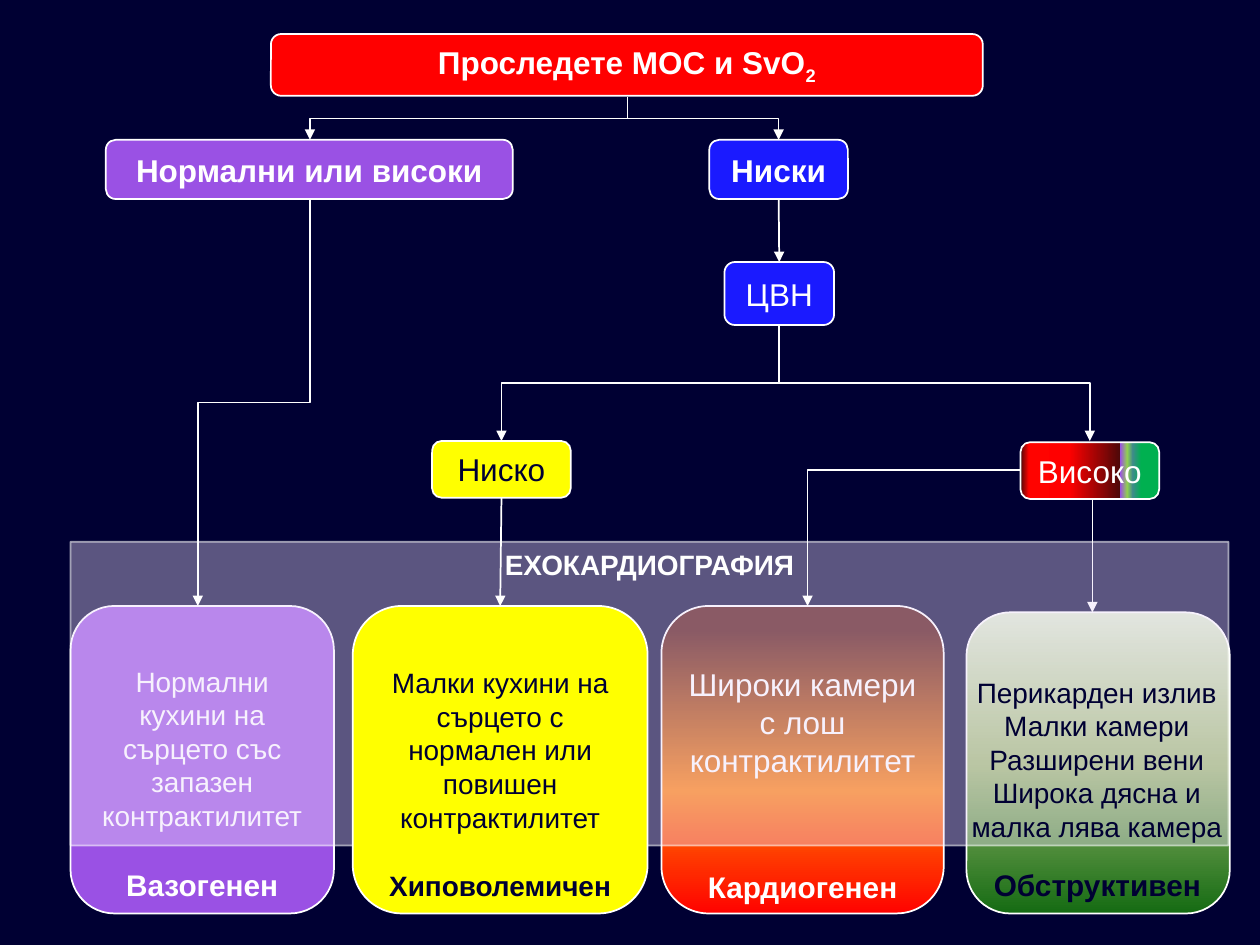
from pptx import Presentation
from pptx.dml.color import RGBColor
from pptx.enum.shapes import MSO_CONNECTOR as Link, MSO_SHAPE as Kind
from pptx.enum.text import MSO_ANCHOR as Anchor, PP_ALIGN as Align
from pptx.oxml import parse_xml
from pptx.oxml.ns import nsdecls, qn
from pptx.util import Inches, Pt
from lxml.etree import SubElement

HUES = {
    "navy": "000033", "white": "FFFFFF", "violet": "9A51E4", "blue": "1A1AFF",
    "yellow": "FFFF00", "red": "FF0000", "lilac": "EBDDFA",
}
FIRE = [(0, "FF0300"), (40, "FF7A00"), (92, "4D0808"), (100, "4D0808")]
LEAF = [(0, "DDEBCF"), (50, "9CB86E"), (100, "156B13")]
MIXED = [(13, "00B050"), (19, "3E8A8B"), (23, "92D050"), (28, "9A51E4"),
         (28, "4D0808"), (65, "FF0000"), (94, "FF0300"), (100, "4D0808")]


def hue(name):
    """Return the named colour."""
    return RGBColor.from_string(HUES[name])


def fade(fill, alpha):
    """Make a solid fill element partly transparent."""
    color = next(fill.iter(qn("a:srgbClr")))
    SubElement(color, qn("a:alpha")).set("val", str(alpha * 1000))


def blend(shape, stops, angle):
    """Fill a shape with a linear gradient."""
    marks = "".join(f'<a:gs pos="{pos * 1000}"><a:srgbClr val="{tint}"/></a:gs>'
                    for pos, tint in stops)
    shape._element.spPr.insert(2, parse_xml(
        f'<a:gradFill {nsdecls("a")} rotWithShape="1"><a:gsLst>{marks}</a:gsLst>'
        f'<a:lin ang="{angle * 60000}" scaled="1"/></a:gradFill>'))


def write(shape, *lines, size=18, color="white", bold=False, sub="", wrap=False,
          anchor=Anchor.MIDDLE, top=0.05, label="", lsize=17, gap=20):
    """Write centred lines, with an optional subscript and bold label."""
    frame = shape.text_frame
    frame.word_wrap = wrap
    frame.vertical_anchor = anchor
    frame.margin_top = Inches(top)
    rows = [(line, size, bold, 0) for line in lines]
    if label:
        rows.append((label, lsize, True, gap))
    for num, (line, points, heavy, space) in enumerate(rows):
        para = frame.add_paragraph() if num else frame.paragraphs[0]
        para.alignment = Align.CENTER
        para.space_before = Pt(space)
        for part in filter(None, (line, sub)):
            run = para.add_run()
            run.text = part
            run.font.name = "Arial"
            run.font.size = Pt(points)
            run.font.bold = heavy
            run.font.color.rgb = hue(color)
            if part == sub:
                run._r.get_or_add_rPr().set("baseline", "-25000")


def panel(slide, area, fill=None, stops=None, angle=0, kind=Kind.ROUNDED_RECTANGLE):
    """Add a white-edged shape with a solid or gradient fill."""
    shape = slide.shapes.add_shape(kind, *map(Inches, area))
    shape.shadow.inherit = False
    if stops:
        blend(shape, stops, angle)
    else:
        shape.fill.solid()
        shape.fill.fore_color.rgb = hue(fill)
    shape.line.color.rgb = hue("white")
    shape.line.width = Pt(1)
    return shape


def note(slide, area, *lines, **style):
    """Add a text box whose lines rest on its bottom edge."""
    box = slide.shapes.add_textbox(*map(Inches, area))
    write(box, *lines, anchor=Anchor.BOTTOM, **style)


def arrow(slide, start, end, kind=Link.STRAIGHT, width=1):
    """Add a white connector with a triangle at its end."""
    link = slide.shapes.add_connector(kind, *map(Inches, start + end))
    link.line.color.rgb = hue("white")
    link.line.width = Pt(width)
    SubElement(link.line._get_or_add_ln(), qn("a:tailEnd")).set("type", "triangle")
    SubElement(link._element.spPr, qn("a:effectLst"))
    return link


def join(slide, upper, lower):
    """Link the bottom of one shape to the top of another."""
    link = arrow(slide, (0, 0), (1, 1))
    link.begin_connect(upper, 2)
    link.end_connect(lower, 0)


def drop(slide, start, end):
    """Add an elbow that leaves downwards and turns halfway."""
    link = arrow(slide, start, end, Link.ELBOW)
    (x1, y1), (x2, y2) = start, end
    wide, high = y2 - y1, abs(x2 - x1)
    link.left = Inches((x1 + x2 - wide) / 2)
    link.top = Inches((y1 + y2 - high) / 2)
    link.width, link.height = Inches(wide), Inches(high)
    frame = link._element.spPr.find(qn("a:xfrm"))
    right = x2 > x1
    frame.set("rot", "16200000" if right else "5400000")
    frame.set("flipH", "1" if right else "0")


def turn(slide, start, end):
    """Add an elbow that leaves sideways and ends downwards."""
    link = arrow(slide, start, end, Link.ELBOW, width=0.75)
    link._element.spPr.find(qn("a:prstGeom")).set("prst", "bentConnector2")


def main():
    """Build the shock decision tree."""
    deck = Presentation()
    deck.slide_width, deck.slide_height = Inches(10), Inches(7.5)
    slide = deck.slides.add_slide(deck.slide_layouts[6])
    slide.background.fill.solid()
    slide.background.fill.fore_color.rgb = hue("navy")
    card = {"wrap": True, "anchor": Anchor.TOP, "top": 0.36}

    vaso = panel(slide, (0.56, 4.81, 2.09, 2.44), "violet")
    write(vaso, "Нормални кухини на сърцето със запазен контрактилитет",
          size=16, label="Вазогенен", **card)
    cardio = panel(slide, (5.25, 4.81, 2.24, 2.44), stops=FIRE, angle=270)
    write(cardio, "Широки камери с лош контрактилитет", **card)
    panel(slide, (7.67, 4.86, 2.09, 2.39), stops=LEAF, angle=90)
    arrow(slide, (8.67, 3.96), (8.67, 4.86))

    echo = panel(slide, (0.56, 4.3, 9.19, 2.41), "lilac", kind=Kind.RECTANGLE)
    fade(echo._element.spPr.find(qn("a:solidFill")), 39)
    fade(echo._element.spPr.find(qn("a:ln")), 59)
    write(echo, "ЕХОКАРДИОГРАФИЯ", size=16, bold=True, anchor=Anchor.TOP)

    hypo = panel(slide, (2.8, 4.81, 2.34, 2.44), "yellow")
    write(hypo, "Малки кухини на сърцето с нормален или повишен контрактилитет",
          size=16, color="navy", label="Хиповолемичен", lsize=16, **card)
    note(slide, (5.51, 6.56, 1.72, 0.67), "Кардиогенен", size=17, bold=True)
    note(slide, (7.78, 6.54, 1.86, 0.67), "Обструктивен", size=17, bold=True,
         color="navy")
    note(slide, (7.6, 5.02, 2.21, 1.72), "Перикарден излив", "Малки камери",
         "Разширени вени", "Широка дясна и", "малка лява камера",
         size=16, color="navy")

    root = panel(slide, (2.15, 0.27, 5.65, 0.49), "red")
    write(root, "Проследете МОС и SvO", bold=True, sub="2")
    norm = panel(slide, (0.84, 1.11, 3.23, 0.47), "violet")
    write(norm, "Нормални или високи", bold=True)
    poor = panel(slide, (5.63, 1.11, 1.1, 0.47), "blue")
    write(poor, "Ниски", bold=True)
    cvp = panel(slide, (5.75, 2.08, 0.87, 0.5), "blue")
    write(cvp, "ЦВН")
    low = panel(slide, (3.43, 3.5, 1.1, 0.45), "yellow")
    write(low, "Ниско", color="navy")
    high = panel(slide, (8.1, 3.51, 1.1, 0.45), stops=MIXED, angle=180)
    write(high, "Високо")

    join(slide, poor, cvp)
    join(slide, low, hypo)
    for start, end in (((4.98, 0.77), (2.46, 1.11)), ((4.98, 0.77), (6.18, 1.11)),
                       ((6.18, 2.58), (3.98, 3.5)), ((6.18, 2.58), (8.65, 3.5)),
                       ((2.46, 1.58), (1.57, 4.81))):
        drop(slide, start, end)
    turn(slide, (8.1, 3.73), (6.41, 4.81))
    deck.save("out.pptx")


if __name__ == "__main__":
    main()
